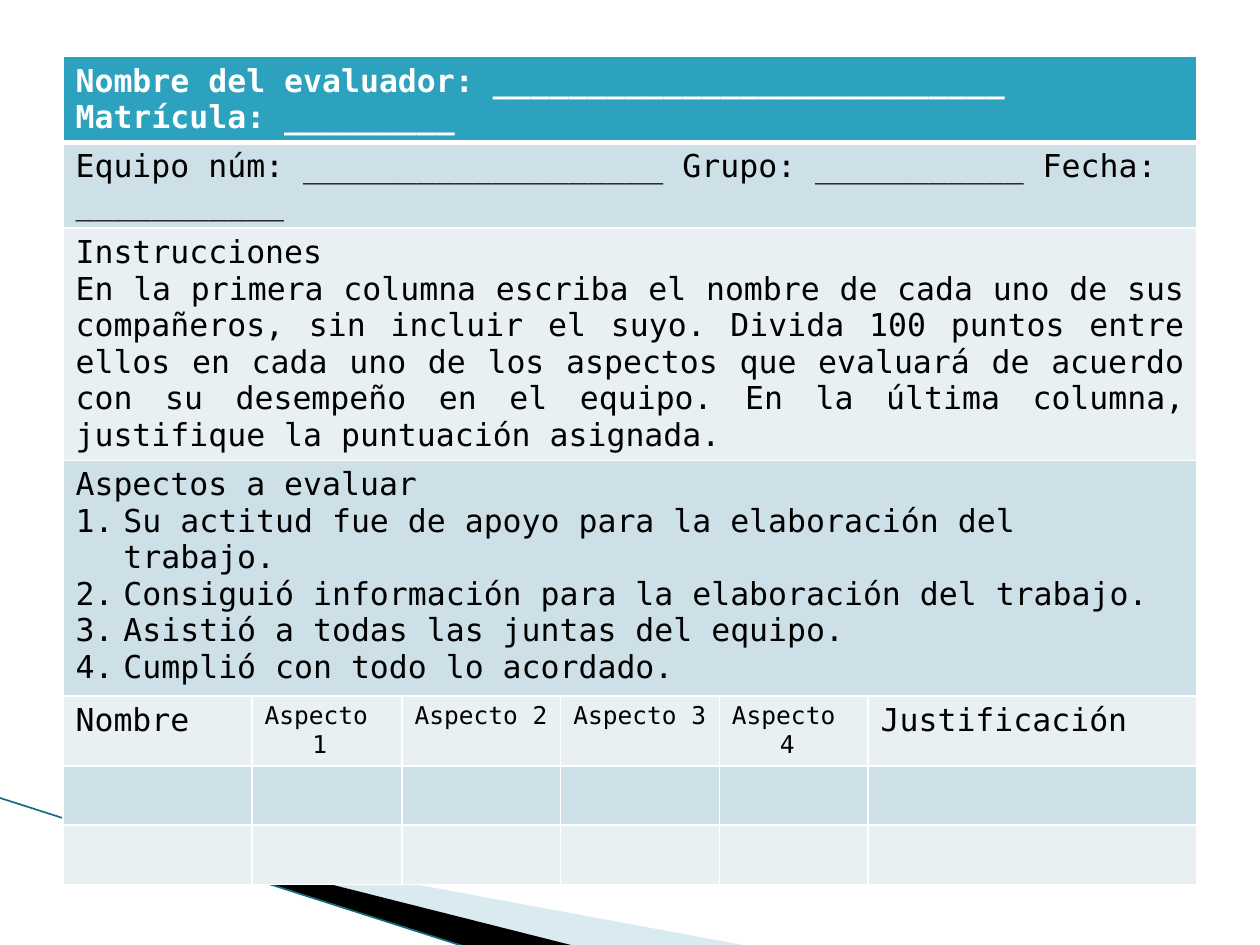
import pptx
import pptx.util
import pptx.dml.color
import pptx.enum.shapes
import pptx.enum.text
import pptx.oxml.ns
import lxml.etree

RGB = pptx.dml.color.RGBColor
WHITE = RGB(0xFF, 0xFF, 0xFF)
BLACK = RGB(0, 0, 0)
TEAL = RGB(0x2D, 0xA2, 0xBF)
DARK = RGB(0x14, 0x6C, 0x82)
SKY = RGB(0xA0, 0xCB, 0xDC)
BAND = RGB(0xCD, 0xE0, 0xE8)
PALE = RGB(0xE8, 0xF0, 0xF4)
FONT = "DejaVu Sans Mono"

# The slide is a grid of 1000 columns by 750 rows
WIDE, HIGH = pptx.util.Inches(10), pptx.util.Inches(7.5)
UNIT = WIDE // 1000
COLS = [150, 119, 126, 126, 118, 261]
ROWS = [67, 66, 165, 187, 47, 47, 47]

HEAD = "Nombre del evaluador: ___________________________ Matrícula: _________"
TEAM = "Equipo núm: ___________________ Grupo: ___________ Fecha: ___________"
GUIDE = [
    "Instrucciones",
    "En la primera columna escriba el nombre de cada uno de sus compañeros, "
    "sin incluir el suyo. Divida 100 puntos entre ellos en cada uno de los "
    "aspectos que evaluará de acuerdo con su desempeño en el equipo. En la "
    "última columna, justifique la puntuación asignada.",
]
POINTS = [
    "Aspectos a evaluar",
    "Su actitud fue de apoyo para la elaboración del trabajo.",
    "Consiguió información para la elaboración del trabajo.",
    "Asistió a todas las juntas del equipo.",
    "Cumplió con todo lo acordado.",
]
LABELS = ["Nombre", *[f"Aspecto {n}" for n in range(1, 5)], "Justificación"]


def add(parent, tag, **attrs):
    return lxml.etree.SubElement(parent, pptx.oxml.ns.qn(tag), attrs)


def wedge(slide, box, spots, color, alpha=None):
    left, top = box
    spots = [((left + x) * UNIT, (top + y) * UNIT) for x, y in spots]
    form = slide.shapes.build_freeform(*spots[0])
    form.add_line_segments(spots[1:], close=True)
    shape = form.convert_to_shape()
    shape.shadow.inherit = False
    shape.fill.solid()
    shape.fill.fore_color.rgb = color
    shape.line.fill.background()
    if alpha:
        tint = shape._element.spPr.find(".//" + pptx.oxml.ns.qn("a:srgbClr"))
        add(tint, "a:alpha", val=str(alpha * 1000))


def swoosh(slide, box):
    """Slanted bands and line in the lower left corner."""
    left, top = box
    wedge(slide, box, [(55, 18), (595, 118), (456, 118), (55, 17)], SKY, 40)
    wedge(slide, box, [(53, 16), (457, 118), (372, 119), (54, 17)], BLACK)
    line = slide.shapes.add_connector(
        pptx.enum.shapes.MSO_CONNECTOR.STRAIGHT,
        (left - 1) * UNIT, top * UNIT, (left + 371) * UNIT, (top + 119) * UNIT)
    line.line.color.rgb = DARK
    line.line.width = pptx.util.Pt(0.95)
    add(line._element.spPr, "a:effectLst")


def paint(cell, color, row):
    """White borders, thick under the header, and a plain fill."""
    props = cell._tc.get_or_add_tcPr()
    for side in "LRTB":
        thick = (row, side) in [(0, "B"), (1, "T")]
        edge = add(props, f"a:ln{side}", w=str(pptx.util.Pt(3 if thick else 1)))
        add(add(edge, "a:solidFill"), "a:srgbClr", val=str(WHITE))
    cell.fill.solid()
    cell.fill.fore_color.rgb = color


def write(cell, texts, size=18, color=BLACK, bold=False):
    cell.text_frame.text = "\n".join(texts)
    for par in cell.text_frame.paragraphs:
        par.font.name = FONT
        par.font.size = pptx.util.Pt(size)
        par.font.bold = bold
        par.font.color.rgb = color
    return cell.text_frame.paragraphs


def hang(par, number=False):
    props = par._p.get_or_add_pPr()
    props.set("marL", str(38 * UNIT))
    props.set("indent", str(-38 * UNIT))
    if number:
        mark = add(props, "a:buAutoNum", type="arabicPeriod")
        props.remove(mark)
        props.insert(0, mark)


def form(slide, box):
    """Evaluation form: full-width rows, then the score grid."""
    left, top = box
    frame = slide.shapes.add_table(
        len(ROWS), len(COLS), left * UNIT, top * UNIT,
        sum(COLS) * UNIT, sum(ROWS) * UNIT)
    table = frame.table
    for col, width in zip(table.columns, COLS):
        col.width = width * UNIT
    for r, height in enumerate(ROWS):
        table.rows[r].height = height * UNIT
        color = TEAL if r == 0 else BAND if r % 2 else PALE
        for c in range(len(COLS)):
            paint(table.cell(r, c), color, r)
        if r < 4:
            table.cell(r, 0).merge(table.cell(r, len(COLS) - 1))

    # Full-width rows
    write(table.cell(0, 0), [HEAD], color=WHITE, bold=True)
    write(table.cell(1, 0), [TEAM])
    for par in write(table.cell(2, 0), GUIDE):
        par.alignment = pptx.enum.text.PP_ALIGN.JUSTIFY
    for par in write(table.cell(3, 0), POINTS)[1:]:
        hang(par, number=True)

    # Score grid labels
    for c, label in enumerate(LABELS):
        size = 14 if label.startswith("Aspecto") else 18
        hang(write(table.cell(4, c), [label], size)[0])


def main():
    deck = pptx.Presentation()
    deck.slide_width, deck.slide_height = WIDE, HIGH
    slide = deck.slides.add_slide(deck.slide_layouts[6])
    swoosh(slide, (0, 633))
    form(slide, (50, 45))
    deck.save("out.pptx")


if __name__ == "__main__":
    main()
